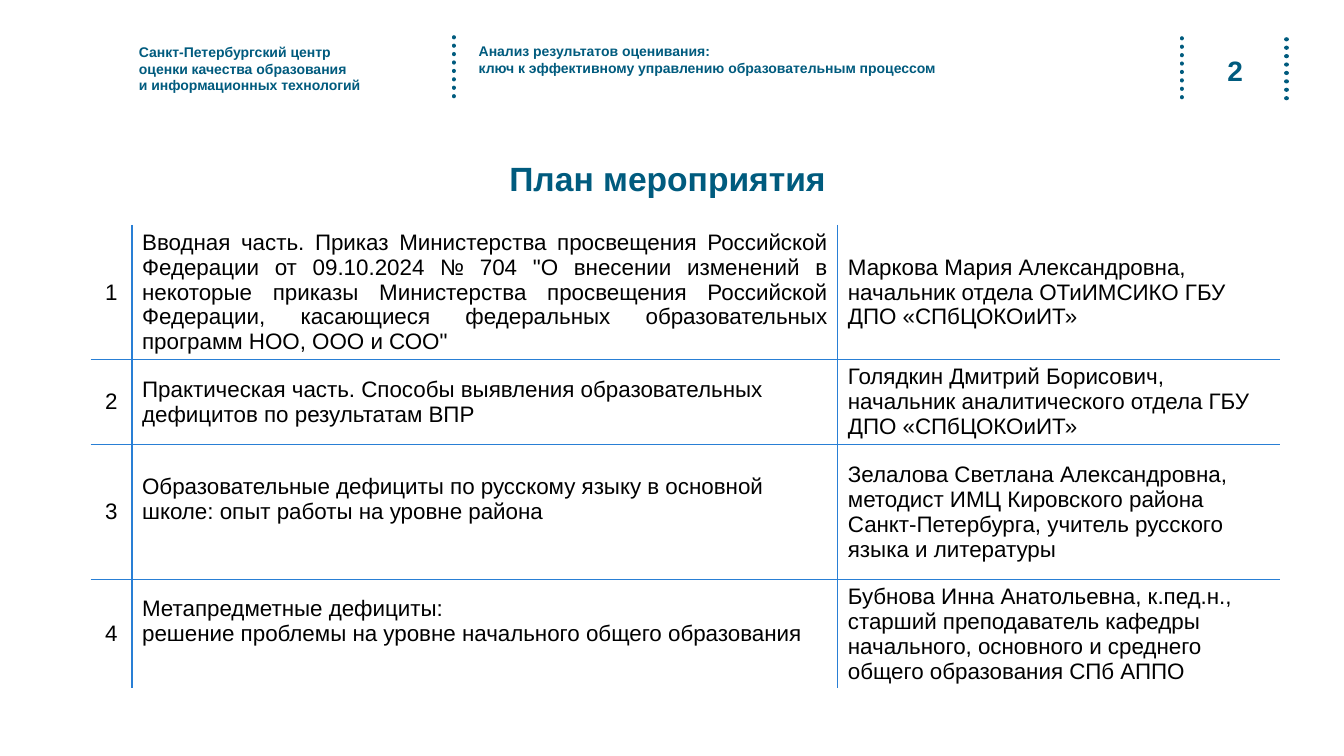
from dataclasses import dataclass

from lxml import etree
from pptx import Presentation
from pptx import util as u
from pptx.dml.color import RGBColor
from pptx.enum import dml, shapes, text
from pptx.oxml import ns

LEFT, MID, JUST = text.PP_ALIGN.LEFT, text.PP_ALIGN.CENTER, text.PP_ALIGN.JUSTIFY
TOP, HALF = text.MSO_ANCHOR.TOP, text.MSO_ANCHOR.MIDDLE


@dataclass(frozen=True)
class Theme:
    font: str = "Arial"
    teal: str = "005B7E"
    rule: str = "297FD5"
    ink: str = "000000"
    paper: str = "FFFFFF"
    small: int = 10
    body: int = 16
    page: int = 20
    title: int = 24


@dataclass(frozen=True)
class Label:
    text: str
    left: float
    top: float
    width: float
    height: float
    size: int
    align: text.PP_ALIGN = LEFT
    anchor: text.MSO_ANCHOR = TOP
    space: float = 1.0


@dataclass(frozen=True)
class Item:
    topic: str
    host: str
    height: float
    align: text.PP_ALIGN = LEFT
    foot: float = 0


LOOK = Theme()
DOTS = [(4.5, 0.37), (11.72, 0.38), (12.76, 0.39)]
COLS = [0.41, 7, 4.39]
LABELS = [
    Label("Санкт-Петербургский центр\vоценки качества образования\v"
          "и информационных технологий", 1.28, 0.38, 2.59, 0.61, LOOK.small),
    Label("План мероприятия", 0.58, 1.25, 12.08, 1.08, LOOK.title, MID, HALF, 0.9),
    Label("2", 11.98, 0.43, 0.54, 0.53, LOOK.page, MID, HALF),
    Label("Анализ результатов оценивания:\v"
          "ключ к эффективному управлению образовательным процессом",
          4.65, 0.37, 6.33, 0.62, LOOK.small),
]
ITEMS = [
    Item("Вводная часть. Приказ Министерства просвещения Российской Федерации "
         "от 09.10.2024 № 704 \"О внесении изменений в некоторые приказы "
         "Министерства просвещения Российской Федерации, касающиеся федеральных "
         "образовательных программ НОО, ООО и СОО\"",
         "Маркова Мария Александровна, начальник отдела ОТиИМСИКО ГБУ ДПО "
         "«СПбЦОКОиИТ»", 1.34, JUST),
    Item("Практическая часть. Способы выявления образовательных дефицитов "
         "по результатам ВПР",
         "Голядкин Дмитрий Борисович, начальник аналитического отдела ГБУ ДПО "
         "«СПбЦОКОиИТ»", 0.84),
    Item("Образовательные дефициты по русскому языку в основной школе: "
         "опыт работы на уровне района",
         "Зелалова Светлана Александровна, методист ИМЦ Кировского района "
         "Санкт-Петербурга, учитель русского языка и литературы", 1.34, foot=0.25),
    Item("Метапредметные дефициты:\v"
         "решение проблемы на уровне начального общего образования",
         "Бубнова Инна Анатольевна, к.пед.н., старший преподаватель кафедры "
         "начального, основного и среднего общего образования СПб АППО",
         1.08, foot=0.25),
]


def style(para, size: int, color: str, bold: bool, align) -> None:
    para.alignment = align
    font = para.font
    font.name, font.size, font.bold = LOOK.font, u.Pt(size), bold
    font.color.rgb = RGBColor.from_string(color)


def add_dots(slide, left: float, top: float) -> None:
    x = u.Inches(left)
    line = slide.shapes.add_connector(
        shapes.MSO_CONNECTOR.STRAIGHT, x, u.Inches(top), x, u.Inches(top + 0.61))
    line.line.color.rgb = RGBColor.from_string(LOOK.teal)
    line.line.width = u.Pt(3)
    line.line.dash_style = dml.MSO_LINE.ROUND_DOT
    props = line._element.spPr
    props.find(ns.qn("a:ln")).set("cap", "rnd")
    etree.SubElement(props, ns.qn("a:effectLst"))


def add_label(slide, label: Label) -> None:
    area = (label.left, label.top, label.width, label.height)
    frame = slide.shapes.add_textbox(*map(u.Inches, area)).text_frame
    frame.word_wrap = True
    frame.vertical_anchor = label.anchor
    para = frame.paragraphs[0]
    para.text = label.text
    para.line_spacing = label.space
    style(para, label.size, LOOK.teal, True, label.align)


def set_rules(cell, sides: dict[str, bool]) -> None:
    """Rule the sides marked true and clear the rest, in L, R, T, B order."""
    props = cell._tc.get_or_add_tcPr()
    for pos, (side, ruled) in enumerate(sides.items()):
        line = etree.Element(ns.qn(f"a:ln{side}"), w=str(u.Pt(1)))
        if ruled:
            fill = etree.SubElement(line, ns.qn("a:solidFill"))
            etree.SubElement(fill, ns.qn("a:srgbClr"), val=LOOK.rule)
        else:
            etree.SubElement(line, ns.qn("a:noFill"))
        props.insert(pos, line)


def fill_cell(cell, words: str, align, foot: float) -> None:
    cell.fill.solid()
    cell.fill.fore_color.rgb = RGBColor.from_string(LOOK.paper)
    cell.vertical_anchor = HALF
    cell.margin_top = 0
    cell.margin_bottom = u.Inches(foot)
    para = cell.text_frame.paragraphs[0]
    para.text = words
    style(para, LOOK.body, LOOK.ink, False, align)


def add_plan(slide) -> None:
    high = sum(item.height for item in ITEMS)
    area = (0.9, 2.23, sum(COLS), high)
    table = slide.shapes.add_table(
        len(ITEMS), len(COLS), *map(u.Inches, area)).table
    table.first_row = table.horz_banding = False
    for col, width in zip(table.columns, COLS):
        col.width = u.Inches(width)
    for r, item in enumerate(ITEMS):
        table.rows[r].height = u.Inches(item.height)
        cells = [(str(r + 1), MID, 0), (item.topic, item.align, item.foot),
                 (item.host, LEFT, 0)]
        for c, (words, align, foot) in enumerate(cells):
            cell = table.cell(r, c)
            fill_cell(cell, words, align, foot)
            set_rules(cell, {"L": c > 0, "R": c < len(COLS) - 1,
                             "T": r > 0, "B": r < len(ITEMS) - 1})


def main() -> None:
    deck = Presentation()
    deck.slide_width, deck.slide_height = u.Inches(13.33), u.Inches(7.5)
    slide = deck.slides.add_slide(deck.slide_layouts[6])
    for left, top in DOTS:
        add_dots(slide, left, top)
    for label in LABELS:
        add_label(slide, label)
    add_plan(slide)
    deck.save("out.pptx")


if __name__ == "__main__":
    main()
